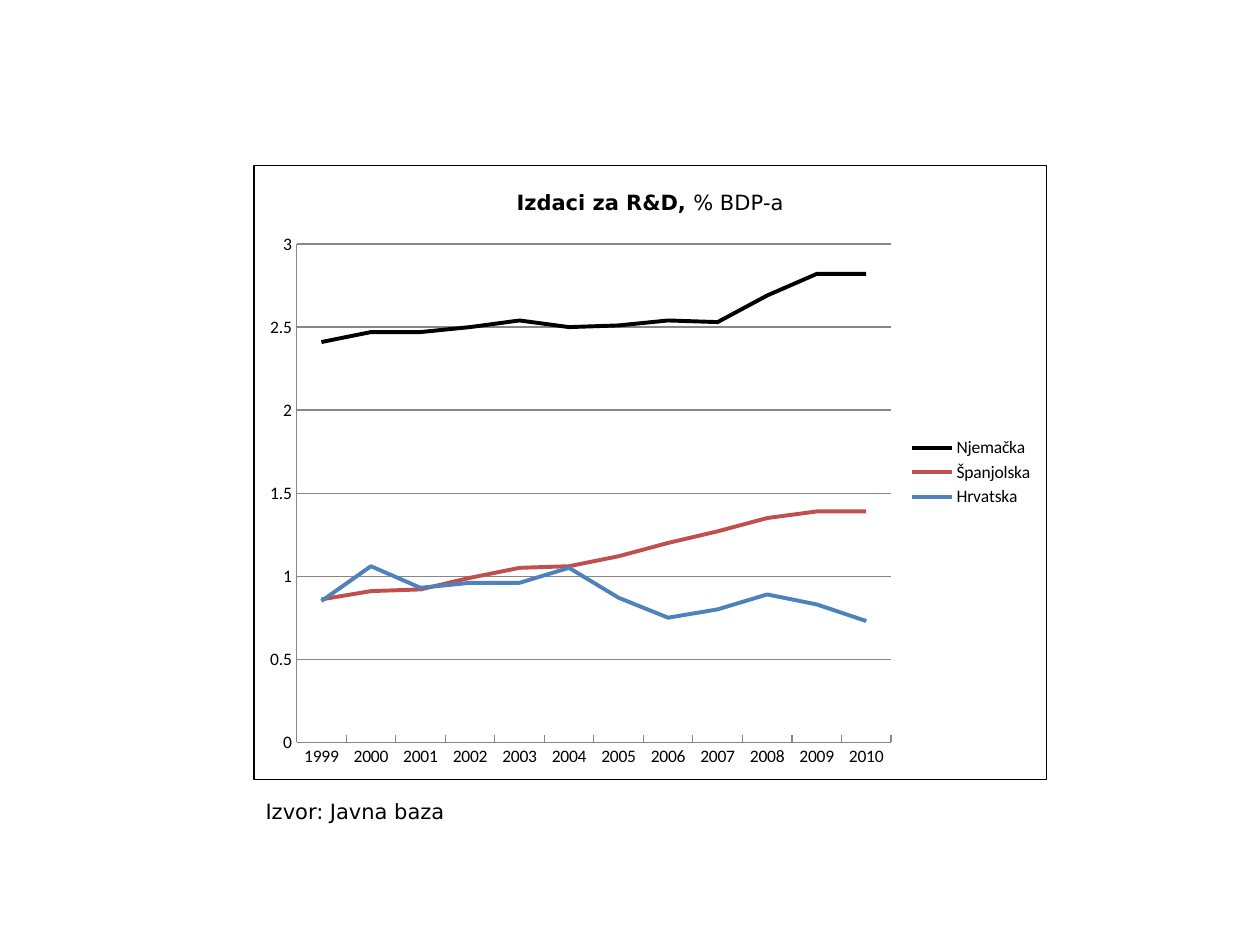
from dataclasses import dataclass

from lxml import etree
from pptx import Presentation
from pptx import util as u
from pptx.chart.data import CategoryChartData
from pptx.dml.color import RGBColor
from pptx.enum import chart as charts, text as texts
from pptx.oxml import parse_xml
from pptx.oxml.ns import nsdecls, qn

COLORS = {
    "black": "000000",
    "red": "C0504D",
    "blue": "4F81BD",
    "grid": "868686",
    "white": "FFFFFF",
}
LEFT = 144.72
TEXT_FONT = "DejaVu Sans"


@dataclass
class Country:
    name: str
    color: str
    spending: list[float]


COUNTRIES = [
    Country("Njemačka", "black",
            [2.41, 2.47, 2.47, 2.5, 2.54, 2.5, 2.51, 2.54, 2.53, 2.69, 2.82, 2.82]),
    Country("Španjolska", "red",
            [0.86, 0.91, 0.92, 0.99, 1.05, 1.06, 1.12, 1.2, 1.27, 1.35, 1.39, 1.39]),
    Country("Hrvatska", "blue",
            [0.85, 1.06, 0.93, 0.96, 0.96, 1.05, 0.87, 0.75, 0.8, 0.89, 0.83, 0.73]),
]


def rgb(color: str) -> RGBColor:
    return RGBColor.from_string(COLORS[color])


def write(paragraph, text: str, *, size: float = 12, bold: bool = False,
          color: str = "black", font: str = TEXT_FONT) -> None:
    run = paragraph.add_run()
    run.text = text
    run.font.size = u.Pt(size)
    run.font.bold = bold
    run.font.name = font
    run.font.color.rgb = rgb(color)


def style_line(line, color: str, width: float) -> None:
    line.color.rgb = rgb(color)
    line.width = u.Pt(width)


def frame_chart(chart) -> None:
    properties = parse_xml(
        f'<c:spPr {nsdecls("c", "a")}>'
        f'<a:solidFill><a:srgbClr val="{COLORS["white"]}"/></a:solidFill>'
        f'<a:ln w="{u.Pt(0.75)}"><a:solidFill><a:srgbClr val="{COLORS["black"]}"/>'
        '</a:solidFill></a:ln></c:spPr>')
    chart.element.find(qn("c:chart")).addnext(properties)


def place_plot(chart, x: float, y: float, width: float, height: float) -> None:
    area = chart.element.find(qn("c:chart")).find(qn("c:plotArea"))
    for layout in area.findall(qn("c:layout")):
        area.remove(layout)
    layout = etree.Element(qn("c:layout"))
    manual = etree.SubElement(layout, qn("c:manualLayout"))
    settings = {"layoutTarget": "inner", "xMode": "edge", "yMode": "edge",
                "x": x, "y": y, "w": width, "h": height}
    for name, value in settings.items():
        etree.SubElement(manual, qn(f"c:{name}")).set("val", str(value))
    area.insert(0, layout)


def style_axes(chart) -> None:
    value_axis, category_axis = chart.value_axis, chart.category_axis
    value_axis.minimum_scale = 0
    value_axis.maximum_scale = 3
    value_axis.major_unit = 0.5
    value_axis.major_tick_mark = charts.XL_TICK_MARK.NONE
    category_axis.major_tick_mark = charts.XL_TICK_MARK.INSIDE
    for line in (value_axis.major_gridlines.format.line,
                 value_axis.format.line, category_axis.format.line):
        style_line(line, "grid", 0.75)


def add_spending_chart(slide) -> None:
    data = CategoryChartData()
    data.categories = [str(year) for year in range(1999, 2011)]
    for country in COUNTRIES:
        data.add_series(country.name, country.spending)
    chart = slide.shapes.add_chart(
        charts.XL_CHART_TYPE.LINE, u.Pt(LEFT), u.Pt(94.32),
        u.Pt(453.6), u.Pt(351.36), data).chart
    chart.font.size = u.Pt(10)
    chart.font.name = "Calibri"
    chart.font.color.rgb = rgb("black")

    heading = chart.chart_title.text_frame.paragraphs[0]
    write(heading, "Izdaci za R&D, ", bold=True)
    write(heading, "% BDP-a")
    chart.chart_title.include_in_layout = False

    chart.has_legend = True
    chart.legend.position = charts.XL_LEGEND_POSITION.RIGHT
    chart.legend.include_in_layout = False

    plot = chart.plots[0]
    plot.vary_by_categories = False
    for series, country in zip(plot.series, COUNTRIES):
        series.smooth = False
        series.marker.style = charts.XL_MARKER_STYLE.NONE
        style_line(series.format.line, country.color, 2.25)

    style_axes(chart)
    place_plot(chart, 0.054, 0.128, 0.75, 0.812)
    frame_chart(chart)


def add_source(slide) -> None:
    box = slide.shapes.add_textbox(u.Pt(LEFT), u.Pt(452.88), u.Pt(124.56), u.Pt(21.6))
    box.text_frame.word_wrap = False
    box.text_frame.auto_size = texts.MSO_AUTO_SIZE.SHAPE_TO_FIT_TEXT
    write(box.text_frame.paragraphs[0], "Izvor: Javna baza")


def main() -> None:
    presentation = Presentation()
    presentation.slide_width = u.Pt(720)
    presentation.slide_height = u.Pt(540)
    slide = presentation.slides.add_slide(presentation.slide_layouts[6])
    add_spending_chart(slide)
    add_source(slide)
    presentation.save("out.pptx")


if __name__ == "__main__":
    main()
